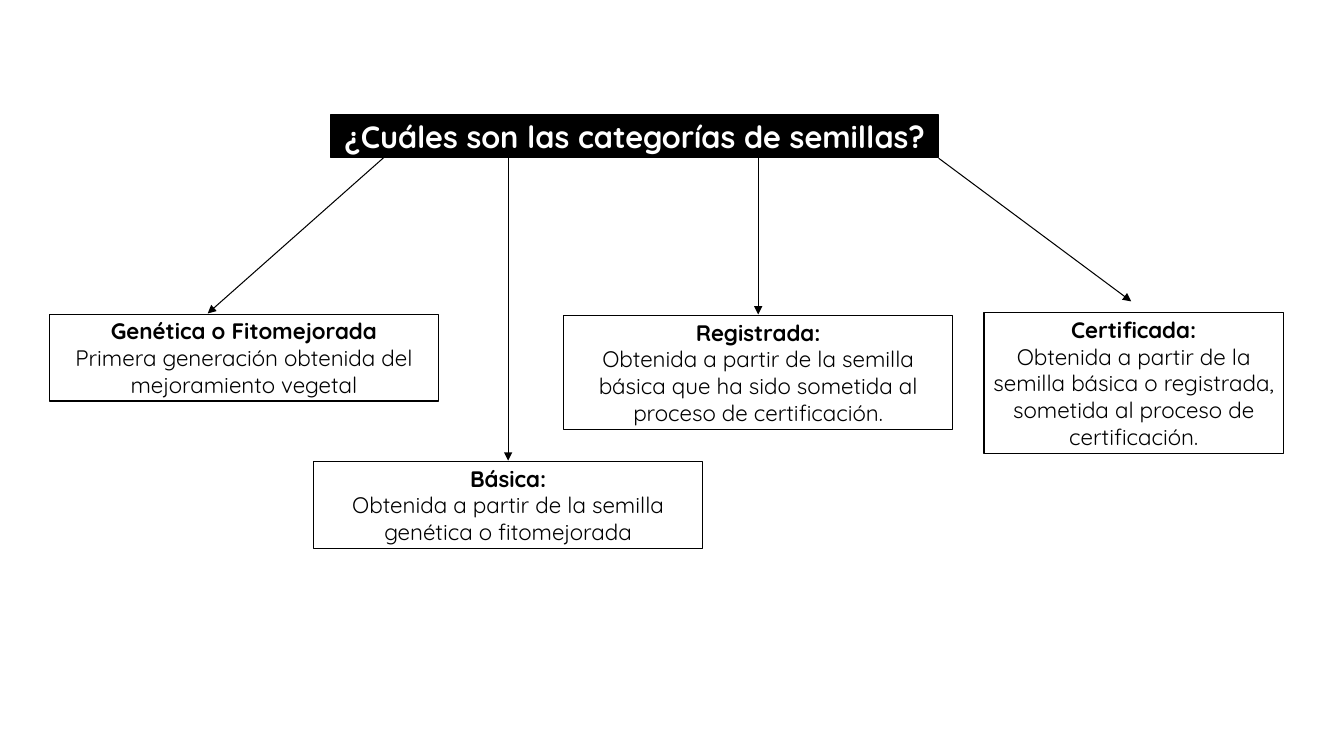
from lxml import etree
from pptx import Presentation
from pptx.dml.color import RGBColor
from pptx.enum.shapes import MSO_CONNECTOR, MSO_SHAPE
from pptx.enum.text import MSO_ANCHOR, PP_ALIGN
from pptx.oxml.ns import qn
from pptx.util import Inches, Pt

BLACK = RGBColor(0x00, 0x00, 0x00)
WHITE = RGBColor(0xFF, 0xFF, 0xFF)
RECT = MSO_SHAPE.RECTANGLE
STRAIGHT = MSO_CONNECTOR.STRAIGHT
CENTER = PP_ALIGN.CENTER
MIDDLE = MSO_ANCHOR.MIDDLE

# Heading, description, box (left, top, width, height)
CATEGORIES = [
    ("Genética o Fitomejorada",
     "Primera generación obtenida del mejoramiento vegetal",
     (0.49, 3.12, 3.86, 0.86)),
    ("Básica:",
     "Obtenida a partir de la semilla genética o fitomejorada",
     (3.11, 4.58, 3.86, 0.86)),
    ("Registrada:",
     "Obtenida a partir de la semilla básica que ha sido sometida al "
     "proceso de certificación.",
     (5.59, 3.13, 3.86, 1.13)),
    ("Certificada:",
     "Obtenida a partir de la semilla básica o registrada, sometida al "
     "proceso de certificación.",
     (9.76, 3.1, 2.97, 1.4)),
]

# Start and end of each arrow
ARROWS = [
    ((3.81, 1.56), (2.06, 3.11)),
    ((5.04, 1.56), (5.04, 4.57)),
    ((7.52, 1.57), (7.52, 3.12)),
    ((9.31, 1.57), (11.22, 2.99)),
]


class Diagram:
    font = "Quicksand"

    def __init__(self, slide):
        self.s = slide

    def box(self, at, lines, size, fill=WHITE, color=BLACK):
        """Outlined box whose first line is bold."""
        sp = self.s.shapes.add_shape(RECT, *map(Inches, at))
        sp.shadow.inherit = False
        sp.fill.solid()
        sp.fill.fore_color.rgb = fill
        sp.line.color.rgb = BLACK
        sp.line.width = Pt(1)
        tf = sp.text_frame
        tf.word_wrap = True
        tf.vertical_anchor = MIDDLE
        tf.margin_left = tf.margin_right = Inches(0.05)
        tf.margin_top = tf.margin_bottom = Inches(0.02)
        tf.text = "\n".join(lines)
        for i, p in enumerate(tf.paragraphs):
            p.alignment = CENTER
            for r in p.runs:
                r.font.name = self.font
                r.font.size = Pt(size)
                r.font.bold = i == 0
                r.font.color.rgb = color

    def arrow(self, start, end):
        """Thin line with a triangle at its end."""
        cn = self.s.shapes.add_connector(STRAIGHT, *map(Inches, start + end))
        cn.line.color.rgb = BLACK
        cn.line.width = Pt(0.75)
        ln = cn.line._get_or_add_ln()
        etree.SubElement(ln, qn("a:tailEnd"), type="triangle")
        etree.SubElement(ln.getparent(), qn("a:effectLst"))


def main():
    prs = Presentation()
    prs.slide_width, prs.slide_height = Inches(13.33), Inches(7.5)
    d = Diagram(prs.slides.add_slide(prs.slide_layouts[6]))

    # Question
    d.box((3.28, 1.14, 6.03, 0.42),
          ["¿Cuáles son las categorías de semillas?"], 22, BLACK, WHITE)

    # Arrows to the categories
    for start, end in ARROWS:
        d.arrow(start, end)

    # Categories
    for heading, description, at in CATEGORIES:
        d.box(at, [heading, description], 16)

    prs.save("out.pptx")


if __name__ == "__main__":
    main()
